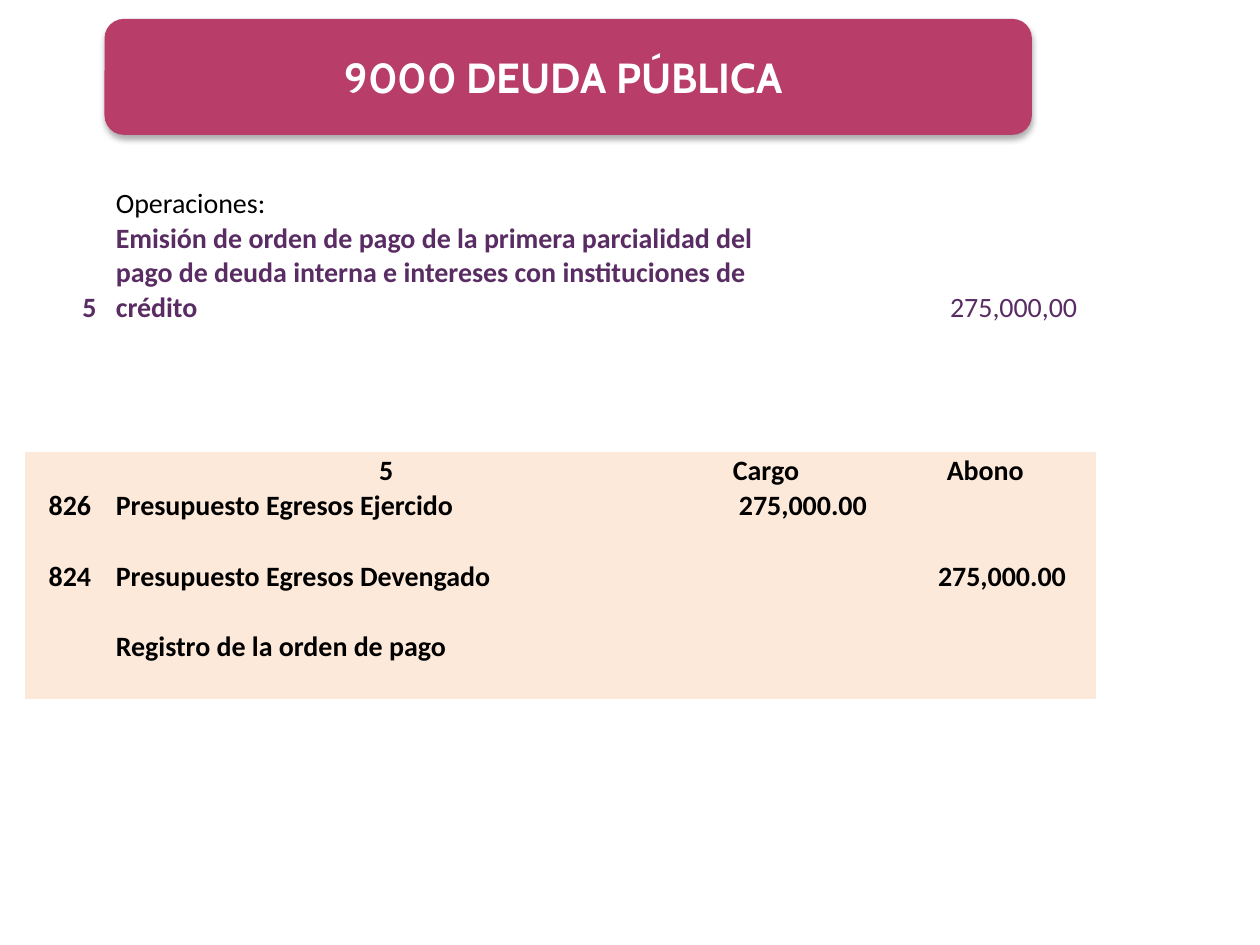
import pptx
import pptx.util
import pptx.dml.color
import pptx.enum.shapes
import pptx.enum.text
import pptx.oxml
import pptx.oxml.ns

Inches = pptx.util.Inches
ALIGN = pptx.enum.text.PP_ALIGN
ANCHOR = pptx.enum.text.MSO_ANCHOR
LEFT, MID, RIGHT = ALIGN.LEFT, ALIGN.CENTER, ALIGN.RIGHT
PLAIN = "{2D5ABB26-0587-4C30-8999-92F81FD0307C}"
BLACK, PLUM, PEACH, ROSE = "000000", "5A2C64", "FDE9D9", "B83D68"


def color(code):
    """Turn a hex string into a colour."""
    return pptx.dml.color.RGBColor.from_string(code)


def style(para, face, size, ink, bold, align):
    """Format a paragraph and its runs."""
    para.alignment = align
    for run in para.runs:
        run.font.name = face
        run.font.size = pptx.util.Pt(size)
        run.font.bold = bold
        run.font.color.rgb = color(ink)


def add_shade(shape):
    """Give a shape a soft shadow below it."""
    shape.shadow.inherit = False
    effects = shape._element.spPr.find(pptx.oxml.ns.qn("a:effectLst"))
    effects.append(pptx.oxml.parse_xml(
        f'<a:outerShdw {pptx.oxml.ns.nsdecls("a")} blurRad="44450" dist="27940" '
        'dir="5400000" algn="ctr" rotWithShape="0">'
        '<a:srgbClr val="000000"><a:alpha val="32000"/></a:srgbClr></a:outerShdw>'))


def add_title(slide, text):
    """Draw the rounded title banner."""
    banner = slide.shapes.add_shape(
        pptx.enum.shapes.MSO_SHAPE.ROUNDED_RECTANGLE,
        Inches(0.83), Inches(0.15), Inches(7.36), Inches(0.92))
    banner.fill.solid()
    banner.fill.fore_color.rgb = color(ROSE)
    banner.line.fill.background()
    add_shade(banner)
    frame = banner.text_frame
    frame.text = text
    frame.vertical_anchor = ANCHOR.MIDDLE
    style(frame.paragraphs[0], "Cabin", 24, "FFFFFF", True, MID)


def fill_cell(cell, fill, text="", align=LEFT, ink=BLACK, bold=True, inset=0.01):
    """Set the fill, insets and text of a cell."""
    if fill:
        cell.fill.solid()
        cell.fill.fore_color.rgb = color(fill)
    else:
        cell.fill.background()
    cell.margin_left = cell.margin_top = Inches(0.01)
    cell.margin_right, cell.margin_bottom = Inches(inset), 0
    cell.vertical_anchor = ANCHOR.BOTTOM
    cell.text_frame.text = text
    para = cell.text_frame.paragraphs[0]
    style(para, "Calibri", 16, ink, bold, align)
    if not text:
        para._p.get_or_add_endParaRPr().set("sz", "1600")


def add_grid(slide, left, top, widths, heights, cells, fill=None):
    """Add a table whose cells are keyed by row and column."""
    grid = slide.shapes.add_table(
        len(heights), len(widths), Inches(left), Inches(top),
        Inches(sum(widths)), Inches(sum(heights))).table
    grid.first_row = grid.horz_banding = False
    grid._tbl.tblPr[0].text = PLAIN
    for col, width in zip(grid.columns, widths):
        col.width = Inches(width)
    for row, height in zip(grid.rows, heights):
        row.height = Inches(height)
    for r in range(len(heights)):
        for c in range(len(widths)):
            fill_cell(grid.cell(r, c), fill, *cells.get((r, c), ()))


def main():
    """Build the slide and save it."""
    deck = pptx.Presentation()
    deck.slide_width, deck.slide_height = Inches(10), Inches(7.5)
    slide = deck.slides.add_slide(deck.slide_layouts[6])
    tasks = {
        (0, 1): ("Operaciones:", LEFT, BLACK, False),
        (1, 0): ("5", MID, PLUM),
        (1, 1): ("Emisión de orden de pago de la primera parcialidad del pago de "
                 "deuda interna e intereses con instituciones de crédito", LEFT, PLUM),
        (1, 2): ("275,000,00", RIGHT, PLUM, False),
    }
    add_grid(slide, 0.51, 1.47, [0.4, 5.09, 2.56], [0.28, 0.82, 0.26], tasks)
    entries = {
        (0, 1): ("5", MID),
        (0, 2): (" Cargo", MID),
        (0, 3): (" Abono", MID),
        (1, 0): ("826", MID),
        (1, 1): ("Presupuesto Egresos Ejercido",),
        (1, 2): ("275,000.00", RIGHT),
        (3, 0): ("824", MID),
        (3, 1): ("Presupuesto Egresos Devengado",),
        (3, 3): ("275,000.00", RIGHT, BLACK, True, 0.24),
        (4, 1): ("Registro de la orden de pago",),
    }
    add_grid(slide, 0.2, 3.59, [0.71, 4.31, 1.67, 1.81],
             [0.28] * 4 + [0.55, 0.28], entries, PEACH)
    add_title(slide, "9000 DEUDA PÚBLICA ")
    deck.save("out.pptx")


if __name__ == "__main__":
    main()
